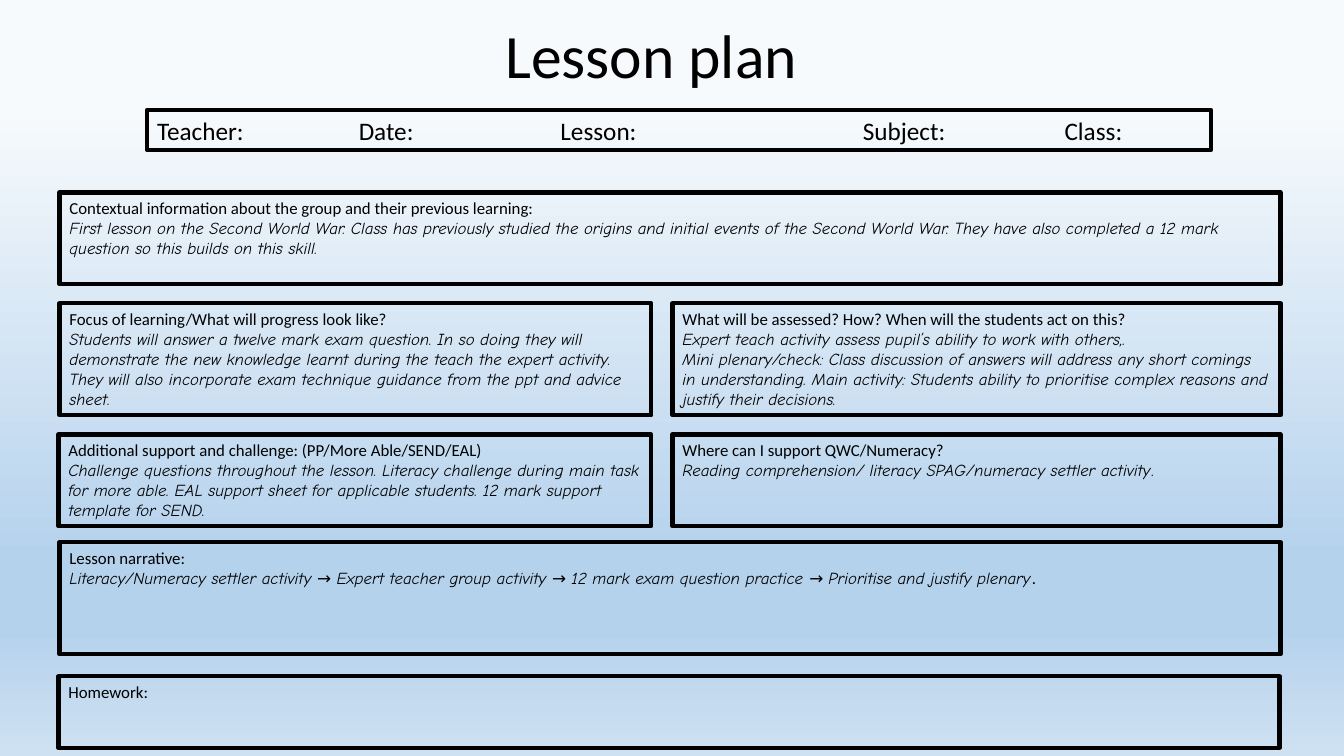
from lxml import etree
from pptx import Presentation
from pptx.dml.color import RGBColor
from pptx.enum.shapes import MSO_SHAPE
from pptx.enum.text import MSO_ANCHOR, MSO_AUTO_SIZE, PP_ALIGN
from pptx.oxml.ns import qn
from pptx.util import Inches, Pt

RECTANGLE = MSO_SHAPE.RECTANGLE
TOP, BOTTOM = MSO_ANCHOR.TOP, MSO_ANCHOR.BOTTOM
NO_AUTOFIT = MSO_AUTO_SIZE.NONE
LEFT, CENTER = PP_ALIGN.LEFT, PP_ALIGN.CENTER

BLACK = RGBColor(0x00, 0x00, 0x00)
MIST = RGBColor(0xF7, 0xFA, 0xFD)
SKY = RGBColor(0xB5, 0xD2, 0xEC)
PALE_SKY = RGBColor(0xCE, 0xE1, 0xF2)
BACKDROP_STOPS = [(14, MIST), (74, SKY), (83, SKY), (100, PALE_SKY)]

HEADING = {"name": "Calibri", "size": Pt(12), "italic": False}
NOTE = {"name": "Comic Neue", "size": Pt(12), "italic": True}
NOTE_UPRIGHT = {**NOTE, "italic": False}
DETAILS = {**HEADING, "size": Pt(18)}
TITLE = {**HEADING, "size": Pt(44)}

DETAIL_FIELDS = ["Teacher:", "Date:", "Lesson:", "Subject:", "Class:"]
DETAIL_TABS = [2, 4, 7, 9]

LEFT_EDGE, OUTER_EDGE, RIGHT_COLUMN = 0.59, 0.58, 6.67
FULL_WIDTH, RIGHT_WIDTH = 12.11, 6.03
SECTIONS = [
    ((LEFT_EDGE, 1.91, FULL_WIDTH, 0.91),
     "Contextual information about the group and their previous learning:",
     [[("First lesson on the Second World War. Class has previously studied the origins and "
        "initial events of the Second World War. They have also completed a 12 mark question "
        "so this builds on this skill.", NOTE)]]),
    ((LEFT_EDGE, 3.01, 5.87, 1.11),
     "Focus of learning/What will progress look like?",
     [[("Students will answer a twelve mark exam question. In so doing they will demonstrate "
        "the new knowledge learnt during the teach the expert activity. They will also "
        "incorporate exam technique guidance from the ppt and advice sheet.", NOTE)]]),
    ((RIGHT_COLUMN, 3.01, RIGHT_WIDTH, 1.11),
     "What will be assessed? How? When will the students act on this?",
     [[("Expert teach activity assess pupil’s ability to work with others,.", NOTE)],
      [("Mini plenary/check: Class discussion of answers will address any short comings in "
        "understanding. Main activity: Students ability to prioritise complex reasons and "
        "justify their decisions.", NOTE)]]),
    ((OUTER_EDGE, 4.31, 5.88, 0.91),
     "Additional support and challenge: (PP/More Able/SEND/EAL)",
     [[("Challenge questions throughout the lesson. Literacy challenge during main task for "
        "more able. EAL support sheet for applicable students. 12 mark support template for "
        "SEND.", NOTE)]]),
    ((RIGHT_COLUMN, 4.31, RIGHT_WIDTH, 0.91),
     "Where can I support QWC/Numeracy?",
     [[("Reading comprehension/ literacy SPAG/numeracy settler activity", NOTE),
       (".", NOTE_UPRIGHT)]]),
    ((LEFT_EDGE, 5.38, FULL_WIDTH, 1.11),
     "Lesson narrative:",
     [[("Literacy/Numeracy settler activity → Expert teacher group activity → 12 mark exam "
        "question practice → Prioritise and justify plenary", NOTE), (".", HEADING)]]),
    ((OUTER_EDGE, 6.71, FULL_WIDTH, 0.71), "Homework:", []),
]


class LessonPlanSlide:
    def __init__(self, deck):
        self.ink = BLACK
        self.outline = Pt(3)
        self.slide = deck.slides.add_slide(deck.slide_layouts[5])

    def backdrop(self, stops):
        fill = self.slide.background.fill
        fill.gradient()
        fill.gradient_angle = 270
        stop_list = self.slide.element.find(".//" + qn("a:gsLst"))
        for default_stop in list(stop_list):
            stop_list.remove(default_stop)
        for percent, color in stops:
            stop = etree.SubElement(stop_list, qn("a:gs"), pos=str(percent * 1000))
            etree.SubElement(stop, qn("a:srgbClr"), val=str(color))

    def fill_text(self, shape, paragraphs, anchor, align):
        frame = shape.text_frame
        settings = {"word_wrap": True, "auto_size": NO_AUTOFIT, "vertical_anchor": anchor}
        for attribute, value in settings.items():
            setattr(frame, attribute, value)
        for index, runs in enumerate(paragraphs):
            paragraph = frame.add_paragraph() if index else frame.paragraphs[0]
            paragraph.alignment = align
            for text, style in runs:
                run = paragraph.add_run()
                run.text = text
                run.font.color.rgb = self.ink
                for attribute, value in style.items():
                    setattr(run.font, attribute, value)
        return frame

    def title(self, area, text):
        heading = self.slide.shapes.title
        for attribute, value in zip(("left", "top", "width", "height"), area):
            setattr(heading, attribute, Inches(value))
        frame = self.fill_text(heading, [[(text, TITLE)]], BOTTOM, CENTER)
        frame.paragraphs[0].line_spacing = 0.9

    def box(self, area, paragraphs):
        panel = self.slide.shapes.add_shape(RECTANGLE, *map(Inches, area))
        panel.shadow.inherit = False
        panel.fill.background()
        panel.line.color.rgb = self.ink
        panel.line.width = self.outline
        etree.SubElement(panel.element.find(".//" + qn("a:ln")), qn("a:round"))
        return self.fill_text(panel, paragraphs, TOP, LEFT)

    def details(self, area, fields, tabs):
        frame = self.box(area, [[("\t".join(fields), DETAILS)]])
        properties = frame.paragraphs[0]._p.get_or_add_pPr()
        tab_list = etree.SubElement(properties, qn("a:tabLst"))
        for position in tabs:
            etree.SubElement(tab_list, qn("a:tab"), pos=str(Inches(position)), algn="l")


def main():
    deck = Presentation()
    deck.slide_width, deck.slide_height = Inches(13.33), Inches(7.5)
    plan = LessonPlanSlide(deck)
    plan.backdrop(BACKDROP_STOPS)
    plan.title((1.46, 0.27, 10, 0.69), "Lesson plan")
    plan.details((1.46, 1.09, 10.55, 0.4), DETAIL_FIELDS, DETAIL_TABS)
    for area, heading, notes in SECTIONS:
        plan.box(area, [[(heading, HEADING)], *notes])
    deck.save("out.pptx")


if __name__ == "__main__":
    main()
